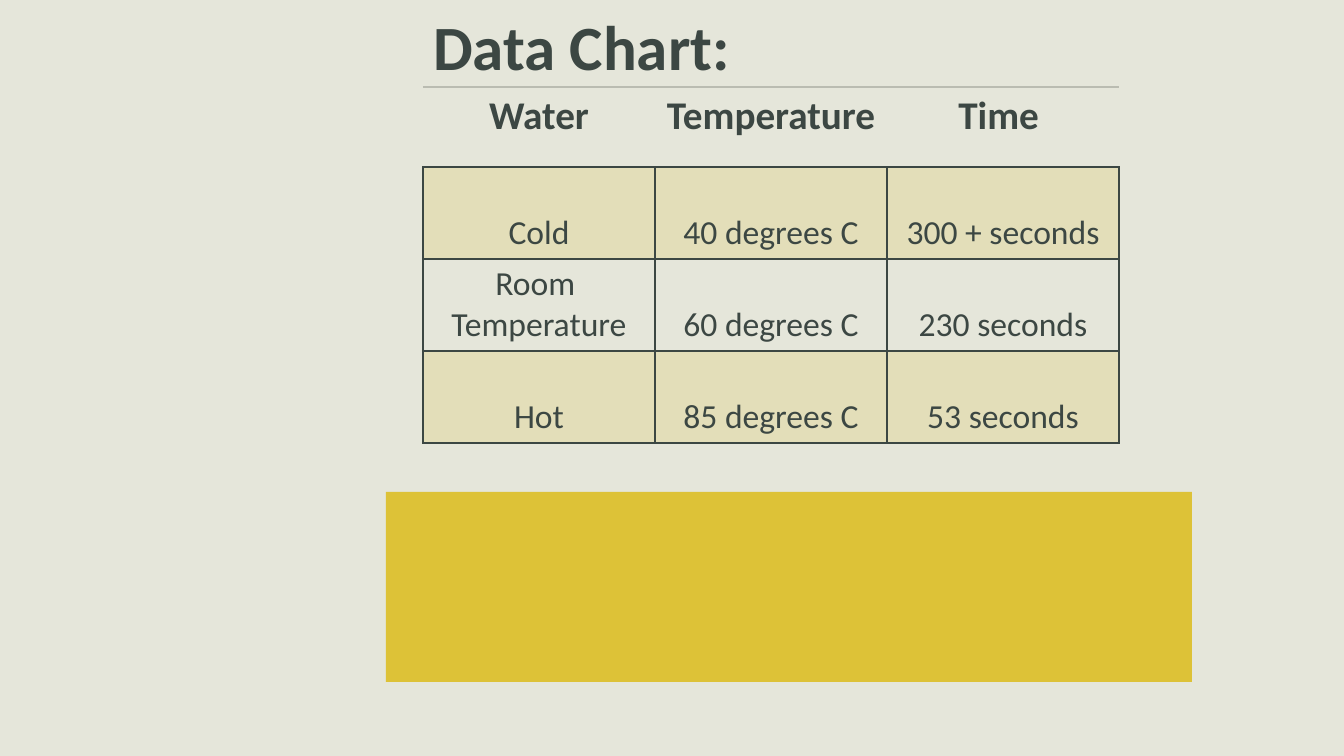
from lxml.etree import SubElement
from pptx import Presentation
from pptx.dml.color import RGBColor
from pptx.enum.shapes import MSO_SHAPE
from pptx.enum.text import MSO_ANCHOR, MSO_AUTO_SIZE, PP_ALIGN
from pptx.oxml.ns import qn
from pptx.util import Pt

EMU_PER_PX = 12192000 / 1344
COLORS = {"paper": "E5E6DA", "gold": "DDC237", "ink": "3C4743", "rule": "BABCB1"}
FONT = "Calibri"
ROWS = [
    ["Water", "Temperature", "Time "],
    ["Cold", "40 degrees C", "300 + seconds"],
    ["Room \nTemperature", "60 degrees C", "230 seconds"],
    ["Hot", "85 degrees C", "53 seconds"],
]


def px(*values):
    return [round(v * EMU_PER_PX) for v in values]


def rgb(name):
    return RGBColor.from_string(COLORS[name])


class SlideBuilder:
    def __init__(self, prs):
        self.s = prs.slides.add_slide(prs.slide_layouts[5])
        fill = self.s.background.fill
        fill.solid()
        fill.fore_color.rgb = rgb("paper")

    def run(self, p, text, size, bold=False):
        r = p.add_run()
        r.text = text
        r.font.name = FONT
        r.font.size = Pt(size)
        r.font.bold = bold
        r.font.color.rgb = rgb("ink")

    def rect(self, box, color):
        sp = self.s.shapes.add_shape(MSO_SHAPE.RECTANGLE, *px(*box))
        sp.shadow.inherit = False
        sp.fill.solid()
        sp.fill.fore_color.rgb = rgb(color)
        sp.line.fill.background()

    def title(self, box, text):
        sp = self.s.shapes.title
        sp.left, sp.top, sp.width, sp.height = px(*box)
        tf = sp.text_frame
        tf.auto_size = MSO_AUTO_SIZE.NONE
        tf.word_wrap = True
        tf.vertical_anchor = MSO_ANCHOR.BOTTOM
        p = tf.paragraphs[0]
        p.alignment = PP_ALIGN.LEFT
        p.line_spacing = 0.9
        self.run(p, text, 45, True)

    def border(self, cell, side, color):
        ln = SubElement(cell._tc.get_or_add_tcPr(), qn("a:ln" + side), w=str(Pt(1)))
        if color:
            solid = SubElement(ln, qn("a:solidFill"))
            SubElement(solid, qn("a:srgbClr"), val=COLORS[color])
        else:
            SubElement(ln, qn("a:noFill"))

    def cell(self, cell, text, header, tinted):
        side_color = None if header else "ink"
        top_color = "rule" if header else "ink"
        for side, color in zip("LRTB", (side_color, side_color, top_color, "ink")):
            self.border(cell, side, color)
        if tinted:
            cell.fill.solid()
            cell.fill.fore_color.rgb = rgb("gold")
            clr = cell._tc.tcPr.find(qn("a:solidFill")).find(qn("a:srgbClr"))
            SubElement(clr, qn("a:alpha"), val="20000")
        else:
            cell.fill.background()
        cell.vertical_anchor = MSO_ANCHOR.TOP if header else MSO_ANCHOR.BOTTOM
        tf = cell.text_frame
        for i, line in enumerate(text.split("\n")):
            p = tf.add_paragraph() if i else tf.paragraphs[0]
            p.alignment = PP_ALIGN.CENTER
            self.run(p, line, 28 if header else 24, header)

    def table(self, left, top, col_width, row_heights, rows):
        box = px(left, top, col_width * len(rows[0]), sum(row_heights))
        table = self.s.shapes.add_table(len(rows), len(rows[0]), *box).table
        table.first_row = table.horz_banding = False
        for col in table.columns:
            col.width = px(col_width)[0]
        for i, (height, texts) in enumerate(zip(row_heights, rows)):
            table.rows[i].height = px(height)[0]
            for j, text in enumerate(texts):
                self.cell(table.cell(i, j), text, i == 0, i % 2 == 1)


def main():
    prs = Presentation()
    prs.slide_width, prs.slide_height = px(1344, 756)
    slide = SlideBuilder(prs)
    slide.rect((386, 492, 806, 190), "gold")
    slide.title((423, 73, 728, 16), "Data Chart:")
    slide.table(423, 87, 232, [80, 92, 92, 92], ROWS)
    prs.save("out.pptx")


if __name__ == "__main__":
    main()
